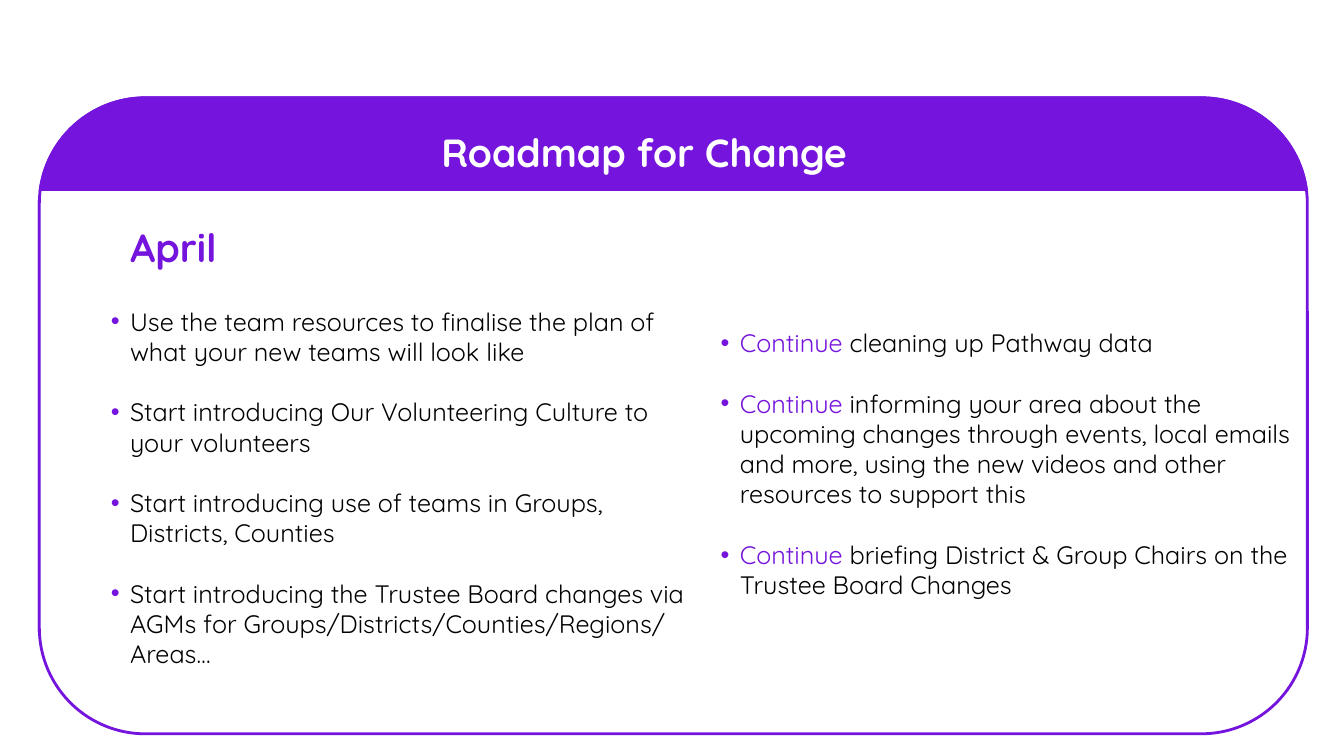
"""Build the April roadmap slide."""
from dataclasses import dataclass

from lxml.etree import SubElement as Sub
from pptx import Presentation
from pptx.dml.color import RGBColor as Rgb
from pptx.enum.shapes import MSO_SHAPE as Kind
from pptx.enum.text import MSO_ANCHOR as Anchor, MSO_AUTO_SIZE as Auto, PP_ALIGN as Align
from pptx.oxml.ns import qn
from pptx.util import Pt

HUES = {"brand": "7414DC", "white": "FFFFFF", "black": "000000"}
FACE = "Quicksand"
LINE = 21.6


@dataclass(frozen=True)
class Box:
    """A frame in points."""
    left: float
    top: float
    width: float
    height: float

    def place(self, shape) -> None:
        """Move a shape into this frame."""
        shape.left, shape.top = Pt(self.left), Pt(self.top)
        shape.width, shape.height = Pt(self.width), Pt(self.height)


@dataclass(frozen=True)
class Panel:
    """A drawn shape with its colours."""
    kind: Kind
    box: Box
    fill: str | None
    line: str


@dataclass(frozen=True)
class Item:
    """A bullet with an optional coloured lead word."""
    text: str
    lead: str = ""


@dataclass(frozen=True)
class Column:
    """A bullet list and its frame."""
    box: Box
    items: tuple[Item, ...]


CARD = Box(28.08, 69.84, 905.76, 454.32)
PANELS = (
    Panel(Kind.ROUNDED_RECTANGLE, CARD, "brand", "brand"),
    Panel(Kind.RECTANGLE, Box(28.08, 137.5, 905.76, 387.36), "white", "white"),
    Panel(Kind.ROUNDED_RECTANGLE, CARD, None, "brand"),
)
HEAD = Box(137.5, 87.84, 653, 74.88)
MONTH = Box(71.28, 156.24, 100.08, 41.04)
COLUMNS = (
    Column(Box(71.28, 156.24, 434.88, 383.76), (
        Item("Use the team resources to finalise the plan of what your new teams will look like"),
        Item("Start introducing Our Volunteering Culture to your volunteers"),
        Item("Start introducing use of teams in Groups, Districts, Counties"),
        Item("Start introducing the Trustee Board changes via AGMs for "
             "Groups/Districts/Counties/Regions/ Areas… "),
    )),
    Column(Box(506.88, 137.5, 425.52, 387.36), (
        Item(" cleaning up Pathway data", "Continue"),
        Item(" informing your area about the upcoming changes through events, local emails "
             "and more, using the new videos and other resources to support this ", "Continue"),
        Item(" briefing District & Group Chairs on the Trustee Board Changes", "Continue"),
    )),
)


def hue(name: str) -> Rgb:
    """Look up a colour."""
    return Rgb.from_string(HUES[name])


def style(run, size: float, tint: str, bold: bool = False) -> None:
    """Set the font of a run."""
    font = run.font
    font.name, font.size, font.bold = FACE, Pt(size), bold
    font.color.rgb = hue(tint)


def draw(slide, panel: Panel) -> None:
    """Draw one panel of the card."""
    box = panel.box
    shape = slide.shapes.add_shape(
        panel.kind, Pt(box.left), Pt(box.top), Pt(box.width), Pt(box.height))
    shape.shadow.inherit = False
    if panel.fill:
        shape.fill.solid()
        shape.fill.fore_color.rgb = hue(panel.fill)
    else:
        shape.fill.background()
    shape.line.color.rgb = hue(panel.line)
    shape.line.width = Pt(2)


def label(shape, box: Box, text: str, tint: str) -> None:
    """Fill a shape with a centred bold heading."""
    box.place(shape)
    frame = shape.text_frame
    frame.text = text
    frame.word_wrap = True
    frame.auto_size = Auto.NONE
    frame.vertical_anchor = Anchor.TOP
    para = frame.paragraphs[0]
    para.alignment = Align.CENTER
    style(para.runs[0], 28, tint, True)


def bullet(para) -> None:
    """Give a paragraph a hanging coloured bullet."""
    props = para._p.get_or_add_pPr()
    props.set("marL", str(Pt(14.4)))
    props.set("indent", str(Pt(-13.68)))
    Sub(Sub(props, qn("a:buClr")), qn("a:srgbClr"), val=HUES["brand"])
    Sub(props, qn("a:buFont"), typeface="Arial")
    Sub(props, qn("a:buChar"), char="•")


def fill(shape, col: Column) -> None:
    """Write the bullets of a column."""
    col.box.place(shape)
    frame = shape.text_frame
    frame.word_wrap = True
    frame.auto_size = Auto.NONE
    frame.vertical_anchor = Anchor.MIDDLE
    for num, item in enumerate(col.items):
        para = frame.add_paragraph() if num else frame.paragraphs[0]
        para.space_before = Pt(LINE if num else 0)
        bullet(para)
        for text, tint in ((item.lead, "brand"), (item.text, "black")):
            if text:
                run = para.add_run()
                run.text = text
                style(run, 18, tint)


def main() -> None:
    """Build and save the deck."""
    deck = Presentation()
    deck.slide_width, deck.slide_height = Pt(960), Pt(540)
    slide = deck.slides.add_slide(deck.slide_layouts[3])
    title, *lists = slide.placeholders
    for panel in PANELS:
        draw(slide, panel)
    for shape, col in zip(lists, COLUMNS):
        fill(shape, col)
    label(title, HEAD, "Roadmap for Change ", "white")
    for shape in (*lists, title):
        slide.shapes.element.append(shape.element)
    month = slide.shapes.add_textbox(0, 0, 0, 0)
    label(month, MONTH, "April", "brand")
    month.text_frame.margin_left = Pt(12.24)
    deck.save("out.pptx")


if __name__ == "__main__":
    main()
